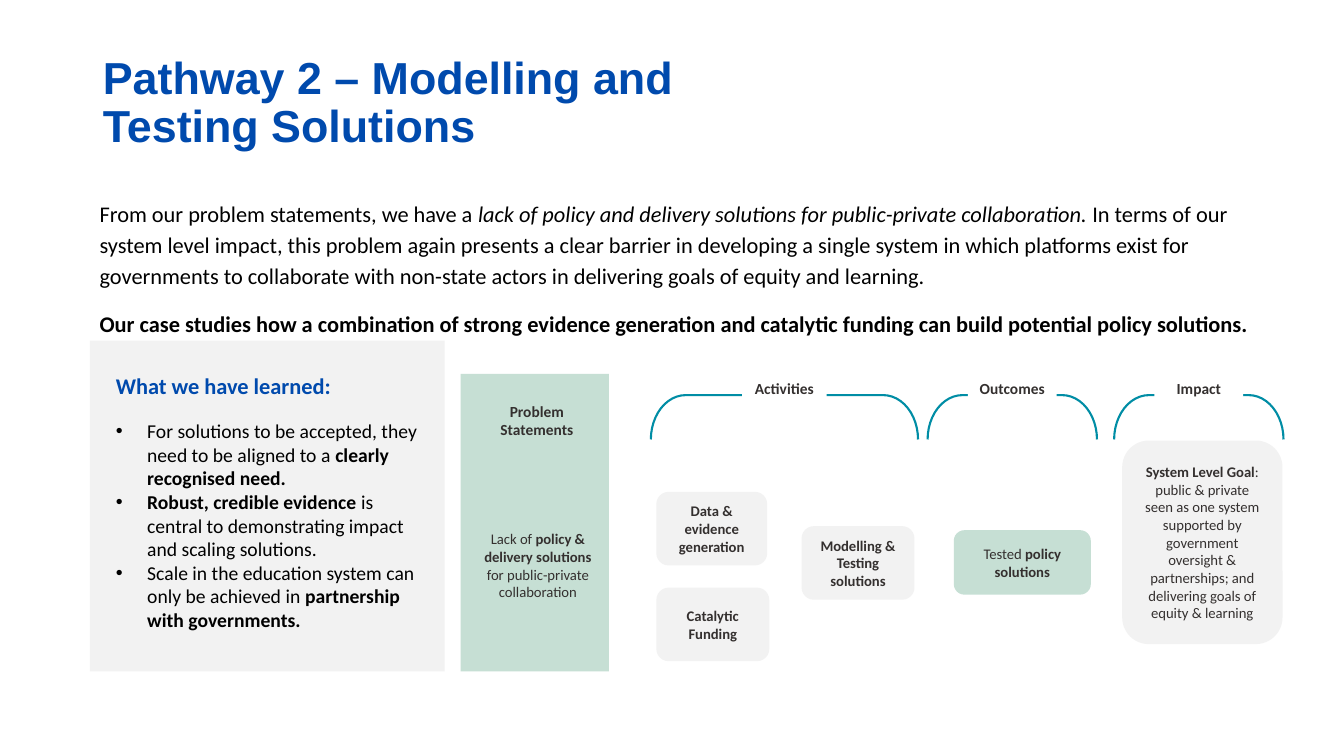
from lxml.etree import SubElement
from pptx import Presentation
from pptx.dml.color import RGBColor
from pptx.enum.shapes import MSO_SHAPE
from pptx.enum.text import MSO_ANCHOR, MSO_AUTO_SIZE, PP_ALIGN
from pptx.oxml.ns import qn
from pptx.util import Inches, Pt

COLOURS = {
    "blue": "004AAD",
    "teal": "008DA5",
    "green": "C6DFD4",
    "grey": "F2F2F2",
    "white": "FFFFFF",
    "black": "000000",
    "ink": "34302F",
}

INTRO = [
    [
        ("From our problem statements, we have a ", ""),
        ("lack of policy and delivery solutions for public-private collaboration. ", "i"),
        ("In terms of our system level impact, this problem again presents a clear "
         "barrier in developing a single system in which platforms exist for governments "
         "to collaborate with non-state actors in delivering goals of equity and learning.", ""),
    ],
    [("Our case studies how a combination of strong evidence generation and catalytic "
      "funding can build potential policy solutions.", "b")],
]

LESSONS = [
    [("For solutions to be accepted, they need to be aligned to a ", ""),
     ("clearly recognised need.", "b")],
    [("Robust, credible evidence ", "b"),
     ("is central to demonstrating impact and scaling solutions.", "")],
    [("Scale in the education system can only be achieved in ", ""),
     ("partnership with governments.", "b")],
]

STEPS = [
    ((7.95, 5.22, 1.12, 0.73), "grey", [("Modelling & Testing solutions", "b")]),
    ((11.13, 4.37, 1.59, 2.02), "grey", [
        ("System Level Goal", "b"),
        (": public & private seen as one system supported by government oversight & "
         "partnerships; and delivering goals of equity & learning", "")]),
    ((9.46, 5.26, 1.36, 0.64), "green", [("Tested ", ""), ("policy solutions", "b")]),
    ((4.59, 5.16, 1.49, 0.9), None, [
        ("Lack of ", ""), ("policy & delivery solutions", "b"),
        (" for public-private collaboration", "")]),
    ((6.51, 4.88, 1.1, 0.73), "grey", [("Data & evidence generation", "b")]),
    ((6.51, 5.83, 1.12, 0.73), "grey", [("Catalytic Funding", "b")]),
]

STAGES = [
    ("Activities", 7.78, 2.65, 0.84),
    ("Outcomes", 10.04, 1.68, 0.88),
    ("Impact", 11.89, 1.68, 0.88),
]


def colour(name):
    """Return the named colour."""
    return RGBColor.from_string(COLOURS[name])


def place(shape, box):
    """Move a shape to a left, top, width, height box in inches."""
    shape.left, shape.top, shape.width, shape.height = map(Inches, box)


def write(shape, paragraphs, size, ink, font="Calibri", align=PP_ALIGN.LEFT,
          anchor=MSO_ANCHOR.TOP):
    """Fill a shape with paragraphs of styled spans."""
    frame = shape.text_frame
    frame.word_wrap = True
    frame.auto_size = MSO_AUTO_SIZE.NONE
    frame.vertical_anchor = anchor
    for index, spans in enumerate(paragraphs):
        para = frame.add_paragraph() if index else frame.paragraphs[0]
        para.alignment = align
        para.font.name = font
        para.font.size = Pt(size)
        para.font.color.rgb = colour(ink)
        for text, style in spans:
            span = para.add_run()
            span.text = text
            span.font.bold = style == "b"
            span.font.italic = style == "i"
    return frame.paragraphs


def add_text(page, box, paragraphs, size, ink, **options):
    """Add a text box and return its paragraphs."""
    text_box = page.shapes.add_textbox(*map(Inches, box))
    return write(text_box, paragraphs, size, ink, **options)


def add_panel(page, box, fill, kind=MSO_SHAPE.RECTANGLE):
    """Add a flat shape without outline."""
    panel = page.shapes.add_shape(kind, *map(Inches, box))
    panel.shadow.inherit = False
    panel.line.fill.background()
    if fill:
        panel.fill.solid()
        panel.fill.fore_color.rgb = colour(fill)
    else:
        panel.fill.background()
    return panel


def add_step(page, box, fill, spans):
    """Add a rounded box with centred text."""
    step = add_panel(page, box, fill, MSO_SHAPE.ROUNDED_RECTANGLE)
    write(step, [spans], 10.5, "ink", align=PP_ALIGN.CENTER, anchor=MSO_ANCHOR.MIDDLE)


def add_stage(page, name, centre, span, label_width):
    """Add a bracket turned upwards with its label in the middle."""
    depth, middle = 0.44, 4.14
    box = (centre - depth / 2, middle - span / 2, depth, span)
    bracket = add_panel(page, box, None, MSO_SHAPE.RIGHT_BRACKET)
    bracket.rotation = 270
    bracket.adjustments[0] = 0.785
    bracket.line.color.rgb = colour("teal")
    bracket.line.width = Pt(1.5)
    label = add_panel(page, (centre - label_width / 2, 3.71, label_width, 0.33), "white")
    write(label, [[(name, "b")]], 11, "ink", align=PP_ALIGN.CENTER)


def add_bullet(para):
    """Give a paragraph a hanging round bullet."""
    para.space_before = Pt(0)
    properties = para._p.get_or_add_pPr()
    properties.set("marL", str(Inches(0.31)))
    properties.set("indent", str(Inches(-0.31)))
    bullet = SubElement(properties, qn("a:buChar"))
    bullet.set("char", "•")
    defaults = properties.find(qn("a:defRPr"))
    defaults.addprevious(bullet)


def main():
    """Build the slide and save it."""
    deck = Presentation()
    deck.slide_width, deck.slide_height = Inches(13.33), Inches(7.5)
    page = deck.slides.add_slide(deck.slide_layouts[1])
    title, lessons = page.placeholders

    place(title, (0.92, 0.4, 6.79, 1.26))
    heading = write(title, [[("Pathway 2 – Modelling and Testing Solutions", "b")]],
                    32, "blue", font="Arial", anchor=MSO_ANCHOR.MIDDLE)
    heading[0].line_spacing = 0.9

    for para in add_text(page, (0.89, 1.9, 11.84, 1.38), INTRO, 16, "black"):
        para.line_spacing = 1.15
        para.space_before = para.space_after = Pt(6)

    add_panel(page, (4.57, 3.71, 1.47, 2.95), "green")
    add_text(page, (4.62, 3.94, 1.41, 0.54), [[("Problem Statements", "b")]], 11, "ink",
             align=PP_ALIGN.CENTER)
    for step in STEPS:
        add_step(page, *step)
    for stage in STAGES:
        add_stage(page, *stage)

    card = add_panel(page, (0.89, 3.38, 3.52, 3.28), "grey")
    add_text(page, (1.05, 3.64, 2.42, 0.37), [[("What we have learned:", "b")]], 16, "blue")
    place(lessons, (1.05, 4.11, 3.22, 2.22))
    for para in write(lessons, LESSONS, 14, "black"):
        add_bullet(para)
    card._element.addnext(lessons._element)

    deck.save("out.pptx")


if __name__ == "__main__":
    main()
